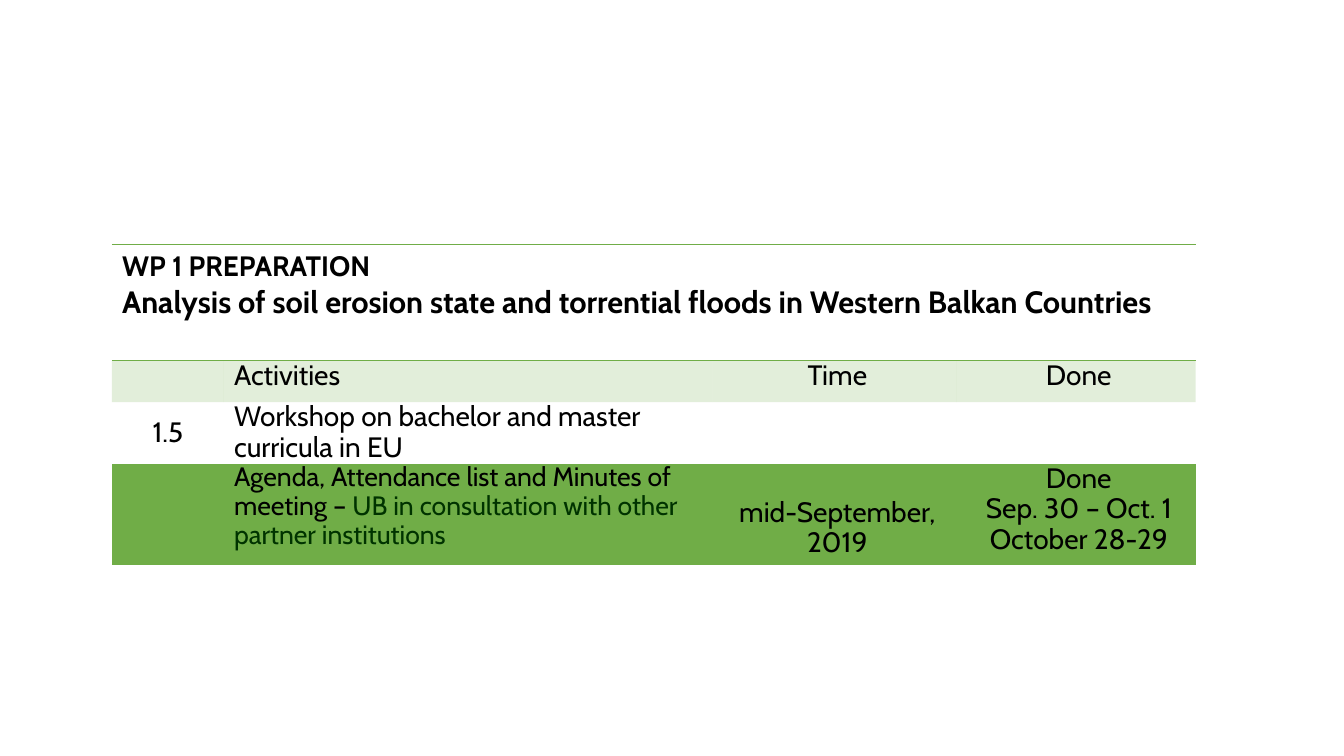
import pptx
import pptx.util
import pptx.dml.color
import pptx.enum.text
import pptx.oxml.ns
from lxml import etree

Pt = pptx.util.Pt
Align = pptx.enum.text.PP_ALIGN
Anchor = pptx.enum.text.MSO_ANCHOR
RGBColor = pptx.dml.color.RGBColor

BLACK = RGBColor(0, 0, 0)
GREEN = RGBColor(0x70, 0xAD, 0x47)
DARK = RGBColor(0, 0x33, 0)
FONT = "Cabin"
PLAIN = "{2D5ABB26-0587-4C30-8999-92F81FD0307C}"
WIDTHS = (80, 349, 174, 171)
HEIGHTS = (83, 29.5, 44, 72)


def add_run(para, text, size=20, color=BLACK, bold=False):
    run = para.add_run()
    run.text = text
    run.font.name = FONT
    run.font.size = Pt(size)
    run.font.bold = bold
    run.font.color.rgb = color


def add_node(parent, tag, **attrs):
    return etree.SubElement(parent, pptx.oxml.ns.qn(tag), attrs)


def add_edge(cell, side):
    props = cell._tc.get_or_add_tcPr()
    line = add_node(props, "a:ln" + side, w=str(Pt(1)))
    fill = add_node(line, "a:solidFill")
    add_node(fill, "a:srgbClr", val=str(GREEN))


def tint(cell):
    cell.fill.solid()
    cell.fill.fore_color.rgb = GREEN
    color = cell._tc.tcPr.find(".//" + pptx.oxml.ns.qn("a:srgbClr"))
    add_node(color, "a:alpha", val="20000")


def write(cell, lines, align=Align.CENTER, size=20, top=0, left=7.2):
    cell.margin_left = Pt(left)
    cell.margin_right = Pt(2.9)
    cell.margin_top = Pt(top)
    cell.margin_bottom = 0
    frame = cell.text_frame
    for i, runs in enumerate(lines):
        para = frame.add_paragraph() if i else frame.paragraphs[0]
        para.alignment = align
        para.line_spacing = 0.9
        for text, color in runs:
            add_run(para, text, size, color)


def add_grid(slide):
    frame = slide.shapes.add_table(
        len(HEIGHTS), len(WIDTHS), Pt(80), Pt(174.7),
        Pt(sum(WIDTHS)), Pt(sum(HEIGHTS)))
    table = frame.table
    table.first_row = False
    table.horz_banding = False
    table._tbl.tblPr[0].text = PLAIN
    for col, width in zip(table.columns, WIDTHS):
        col.width = Pt(width)
    for i, height in enumerate(HEIGHTS):
        row = table.rows[i]
        row.height = Pt(height)
        for cell in row.cells:
            if i == 0:
                add_edge(cell, "T")
            if i in (0, 3):
                add_edge(cell, "B")
            if i % 2:
                tint(cell)
            else:
                cell.fill.background()
    table.cell(0, 0).merge(table.cell(0, 3))
    return table


def add_head(cell):
    para = cell.text_frame.paragraphs[0]
    add_run(para, "WP 1 PREPARATION", 20, bold=True)
    para.add_line_break()
    add_run(para, "Analysis of soil erosion state and torrential floods in "
            "Western Balkan Countries", 22, bold=True)


def main():
    deck = pptx.Presentation()
    deck.slide_width = Pt(960)
    deck.slide_height = Pt(540)
    slide = deck.slides.add_slide(deck.slide_layouts[6])
    table = add_grid(slide)
    add_head(table.cell(0, 0))

    write(table.cell(1, 1), [[("Activities", BLACK)]], Align.LEFT)
    write(table.cell(1, 2), [[("Time", BLACK)]])
    write(table.cell(1, 3), [[("Done", BLACK)]])

    write(table.cell(2, 0), [[("1.5", BLACK)]], left=2.9)
    table.cell(2, 0).vertical_anchor = Anchor.MIDDLE
    write(table.cell(2, 1),
          [[("Workshop on bachelor and master curricula in EU", BLACK)]],
          Align.LEFT)

    write(table.cell(3, 1),
          [[("Agenda, Attendance list and Minutes of meeting – ", BLACK),
            ("UB in consultation with other partner institutions", DARK)]],
          Align.LEFT, 19)
    write(table.cell(3, 2), [[("mid-September, 2019", BLACK)]], top=24.3)
    dates = ("Done", "Sep. 30 – Oct. 1", "October 28-29")
    write(table.cell(3, 3), [[(date, BLACK)] for date in dates])
    deck.save("out.pptx")


if __name__ == "__main__":
    main()
